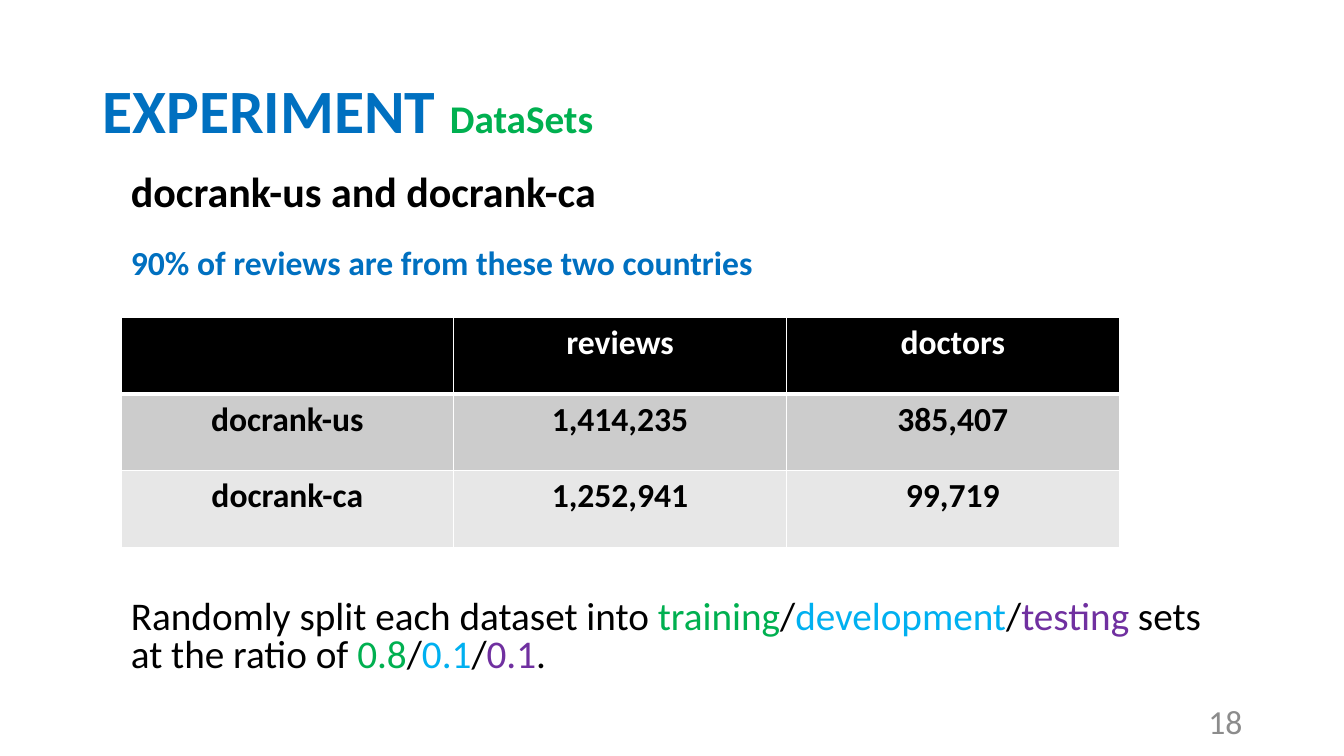
"""Build the slide on the experiment's datasets."""
from lxml.etree import SubElement as Sub
from pptx import Presentation
from pptx.dml.color import RGBColor as Rgb
from pptx.enum.text import MSO_ANCHOR as Anchor, PP_ALIGN as Align
from pptx.oxml.ns import qn
from pptx.util import Inches, Pt

THEME = {
    "font": "Calibri",
    "size": {"title": 44, "head": 30, "body": 28, "small": 24},
    "color": {
        "blue": "0070C0", "green": "00B050", "sky": "00B0F0",
        "violet": "7030A0", "black": "000000", "white": "FFFFFF",
        "gray": "8C8C8C", "mid": "CCCCCC", "pale": "E7E7E7",
    },
}

TEXTS = [
    {"at": (0.92, 0.4, 11.5, 1.45), "anchor": Anchor.MIDDLE, "line": 0.9,
     "runs": [("EXPERIMENT ", "title", "blue", True),
              ("DataSets", "body", "green", True)]},
    {"at": (9.42, 6.95, 3, 0.4), "anchor": Anchor.MIDDLE, "align": Align.RIGHT,
     "runs": [("18", "small", "gray", False)]},
    {"at": (1.2, 1.73, 9.75, 0.51), "line": 0.7, "before": 10,
     "runs": [("docrank-us and docrank-ca", "head", "black", True)]},
    {"at": (1.2, 2.4, 11, 0.88), "line": 0.9, "before": 10,
     "runs": [("90% of reviews are from these two countries",
               "small", "blue", True)]},
    {"at": (1.2, 5.91, 11, 0.88), "line": 0.8, "before": 10,
     "runs": [(text, "body", color, False) for text, color in (
         ("Randomly split each dataset into ", "black"),
         ("training", "green"), ("/", "black"),
         ("development", "sky"), ("/", "black"),
         ("testing", "violet"), (" sets at the ratio of ", "black"),
         ("0.8", "green"), ("/", "black"),
         ("0.1", "sky"), ("/", "black"),
         ("0.1", "violet"), (".", "black"))]},
]

GRID_AT = (1.2, 3.15, 9.9, 2.28)
ROWS = [
    (("", "reviews", "doctors"), "black", "white"),
    (("docrank-us", "1,414,235", "385,407"), "mid", "black"),
    (("docrank-ca", "1,252,941", "99,719"), "pale", "black"),
]


def tint(name):
    return Rgb.from_string(THEME["color"][name])


def add_run(para, text, size, color, bold):
    run = para.add_run()
    run.text = text
    font = run.font
    font.name, font.bold = THEME["font"], bold
    font.size = Pt(THEME["size"][size])
    font.color.rgb = tint(color)


def add_text(slide, at, runs, anchor=Anchor.TOP, align=Align.LEFT,
             line=1.0, before=0):
    frame = slide.shapes.add_textbox(*map(Inches, at)).text_frame
    frame.word_wrap = True
    frame.vertical_anchor = anchor
    para = frame.paragraphs[0]
    para.alignment, para.line_spacing = align, line
    para.space_before = Pt(before)
    for run in runs:
        add_run(para, *run)


def add_edge(cell, side, width):
    props = cell._tc.get_or_add_tcPr()
    edge = Sub(props, qn(f"a:ln{side}"), w=str(Pt(width)))
    fill = Sub(edge, qn("a:solidFill"))
    Sub(fill, qn("a:srgbClr"), val=THEME["color"]["white"])


def add_grid(slide):
    count = len(ROWS[0][0])
    grid = slide.shapes.add_table(len(ROWS), count, *map(Inches, GRID_AT)).table
    for col in grid.columns:
        col.width = Inches(GRID_AT[2] / count)
    for r, (words, fill, color) in enumerate(ROWS):
        grid.rows[r].height = Inches(GRID_AT[3] / len(ROWS))
        for c, word in enumerate(words):
            cell = grid.cell(r, c)
            for side in "LRTB":
                thick = (r, side) in ((0, "B"), (1, "T"))
                add_edge(cell, side, 3 if thick else 1)
            cell.fill.solid()
            cell.fill.fore_color.rgb = tint(fill)
            para = cell.text_frame.paragraphs[0]
            para.alignment = Align.CENTER
            if word:
                add_run(para, word, "small", color, True)


def main():
    deck = Presentation()
    deck.slide_width, deck.slide_height = Inches(13.33), Inches(7.5)
    slide = deck.slides.add_slide(deck.slide_layouts[6])
    for text in TEXTS:
        add_text(slide, **text)
    add_grid(slide)
    deck.save("out.pptx")


if __name__ == "__main__":
    main()
